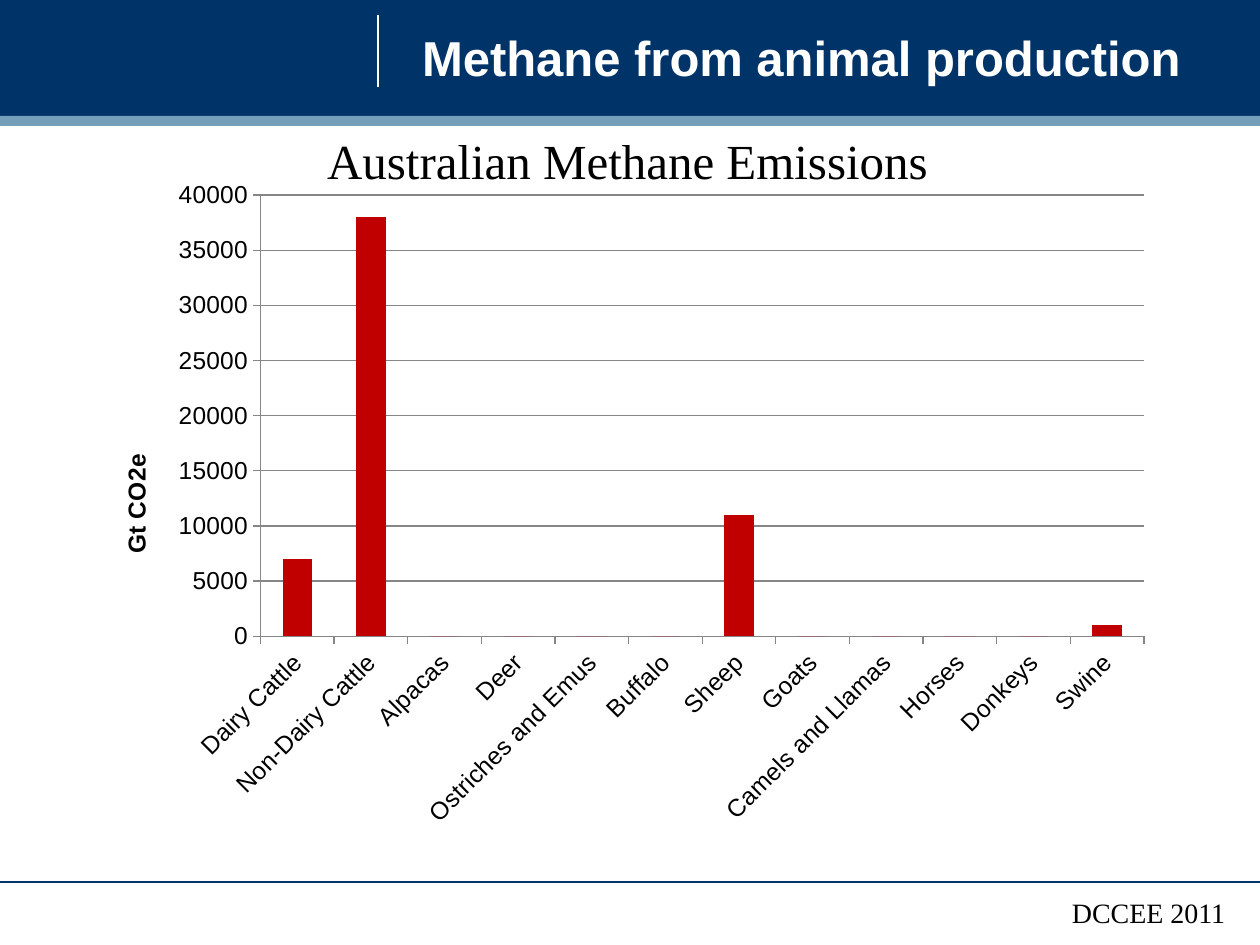
from dataclasses import dataclass

from pptx import Presentation
from pptx import util as u
from pptx.chart import data as chart_data
from pptx.dml import color
from pptx.enum import chart as ch, shapes, text
from pptx.oxml import parse_xml
from pptx.oxml.ns import nsdecls


@dataclass(frozen=True)
class Theme:
    navy: str = "003368"
    strip: str = "759FB8"
    white: str = "FFFFFF"
    black: str = "000000"
    grid: str = "868686"
    bar: str = "C00000"
    sans: str = "Arial"
    serif: str = "Times New Roman"
    heading: int = 28
    source: int = 16
    label: int = 14


THEME = Theme()
EMISSIONS = {
    "Dairy Cattle": 7000, "Non-Dairy Cattle": 38000, "Alpacas": 0, "Deer": 0,
    "Ostriches and Emus": 0, "Buffalo": 0, "Sheep": 11000, "Goats": 0,
    "Camels and Llamas": 0, "Horses": 0, "Donkeys": 0, "Swine": 1000,
}


def rgb(value):
    return color.RGBColor.from_string(value)


def place(sp, box):
    sp.left, sp.top, sp.width, sp.height = map(u.Inches, box)


def style_font(font, size, name=THEME.sans, fill=THEME.black, bold=False):
    font.size, font.name, font.bold = u.Pt(size), name, bold
    font.color.rgb = rgb(fill)


def write(tf, content, align=text.PP_ALIGN.LEFT, anchor=text.MSO_ANCHOR.TOP, **font):
    tf.word_wrap = True
    tf.auto_size = text.MSO_AUTO_SIZE.NONE
    tf.vertical_anchor = anchor
    p = tf.paragraphs[0]
    p.alignment = align
    r = p.add_run()
    r.text = content
    style_font(r.font, **font)


def add_band(s, box, fill):
    sp = s.shapes.add_shape(shapes.MSO_SHAPE.RECTANGLE, *map(u.Inches, box))
    sp.shadow.inherit = False
    sp.fill.solid()
    sp.fill.fore_color.rgb = rgb(fill)
    sp.line.fill.background()


def add_rule(s, ends, line_color):
    rule = s.shapes.add_connector(shapes.MSO_CONNECTOR.STRAIGHT, *map(u.Inches, ends))
    rule.line.color.rgb = rgb(line_color)
    rule.line.width = u.Pt(0.75)
    rule.element.spPr.append(parse_xml(f"<a:effectLst {nsdecls('a')}/>"))


def add_text(s, box, content, **fmt):
    sp = s.shapes.add_textbox(*map(u.Inches, box))
    write(sp.text_frame, content, **fmt)


def set_layout(parent, index, **fractions):
    for old in parent.xpath("c:layout"):
        parent.remove(old)
    target = '<c:layoutTarget val="inner"/>' if "w" in fractions else ""
    modes = "".join(f'<c:{k}Mode val="edge"/>' for k in "xy")
    sizes = "".join(f'<c:{k} val="{v}"/>' for k, v in fractions.items())
    parent.insert(index, parse_xml(
        f"<c:layout {nsdecls('c')}><c:manualLayout>{target}{modes}{sizes}"
        "</c:manualLayout></c:layout>"))


def rotate(body, degrees):
    body.set("rot", str(degrees * 60000))
    body.set("vert", "horz")


def style_axis(axis):
    axis.major_tick_mark = ch.XL_TICK_MARK.OUTSIDE
    axis.minor_tick_mark = ch.XL_TICK_MARK.NONE
    axis.format.line.color.rgb = rgb(THEME.grid)
    style_font(axis.tick_labels.font, THEME.label)


def add_emissions_chart(s, box):
    data = chart_data.CategoryChartData()
    data.categories = list(EMISSIONS)
    data.add_series("Series 1", list(EMISSIONS.values()))
    chart = s.shapes.add_chart(
        ch.XL_CHART_TYPE.COLUMN_CLUSTERED, *map(u.Inches, box), data).chart
    chart.has_title = False
    chart.has_legend = False
    style_font(chart.font, THEME.label)

    plot = chart.plots[0]
    plot.vary_by_categories = False
    plot.gap_width = 150
    bars = plot.series[0].format.fill
    bars.solid()
    bars.fore_color.rgb = rgb(THEME.bar)

    values = chart.value_axis
    for axis in (chart.category_axis, values):
        style_axis(axis)
    values.minimum_scale, values.maximum_scale, values.major_unit = 0, 40000, 5000
    values.major_gridlines.format.line.color.rgb = rgb(THEME.grid)
    title = values.axis_title
    write(title.text_frame, "Gt CO2e", size=THEME.label, bold=True)
    rotate(title.element.xpath(".//a:bodyPr")[0], -90)
    rotate(chart.element.xpath(".//c:catAx/c:txPr/a:bodyPr")[0], -45)
    set_layout(title.element, 1, x=0.02, y=0.42)
    set_layout(chart.element.xpath(".//c:plotArea")[0], 0,
               x=0.155, y=0.041, w=0.825, h=0.657)


def main():
    prs = Presentation()
    prs.slide_width, prs.slide_height = u.Inches(10), u.Inches(7.5)
    s = prs.slides.add_slide(prs.slide_layouts[5])

    add_band(s, (0, 0, 10, 0.92), THEME.navy)
    add_rule(s, (3, 0.12, 3, 0.69), THEME.white)
    add_rule(s, (0, 7, 10, 7), THEME.navy)
    add_band(s, (0, 0.92, 10, 0.08), THEME.strip)

    title = s.shapes.title
    place(title, (3.25, 0.08, 6.33, 0.75))
    s.shapes.element.append(title.element)
    write(title.text_frame, "Methane from animal production", size=THEME.heading,
          fill=THEME.white, bold=True, anchor=text.MSO_ANCHOR.MIDDLE)

    add_text(s, (8.41, 7.06, 2.03, 0.37), "DCCEE 2011",
             size=THEME.source, name=THEME.serif)
    add_emissions_chart(s, (0.75, 1.33, 8.5, 5.33))
    add_text(s, (2.48, 0.99, 5, 0.57), "Australian Methane Emissions",
             size=THEME.heading, name=THEME.serif, align=text.PP_ALIGN.CENTER)
    prs.save("out.pptx")


if __name__ == "__main__":
    main()
